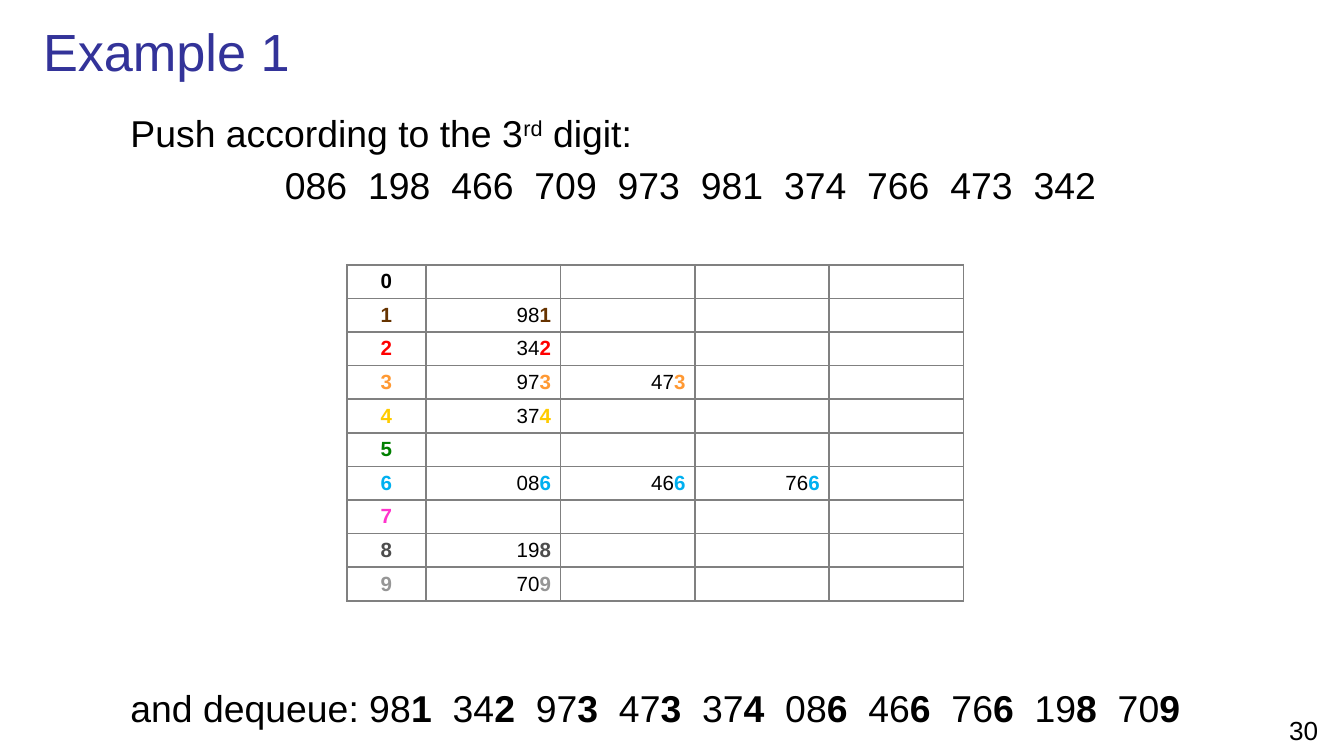
from lxml.etree import SubElement
from pptx import Presentation
from pptx.dml.color import RGBColor
from pptx.enum.text import MSO_ANCHOR as Anchor, MSO_AUTO_SIZE as AutoSize, PP_ALIGN as Align
from pptx.oxml import parse_xml
from pptx.oxml.ns import nsdecls, qn
from pptx.util import Inches, Pt

BLACK = RGBColor(0x00, 0x00, 0x00)
NAVY = RGBColor(0x33, 0x33, 0x99)
GRAY = RGBColor(0x80, 0x80, 0x80)
DIGIT_COLORS = [RGBColor.from_string(code) for code in (
    "000000", "663300", "FF0000", "FF9933", "FFCC00",
    "008000", "00B0F0", "FF33CC", "4D4D4D", "969696")]

TITLE = "Example 1"
PAGE_NUMBER = "30"
PUSHED = ["086", "198", "466", "709", "973", "981", "374", "766", "473", "342"]
QUEUES = [[number for number in PUSHED if number[-1] == str(digit)] for digit in range(10)]
DEQUEUED = [number for queue in QUEUES for number in queue]

SLIDE_WIDTH = 10
SLIDE_HEIGHT = SLIDE_WIDTH * 9 / 16
COLUMN_WIDTHS = [0.59, 1, 1, 1, 1]
ROW_HEIGHT = 0.25
BODY_SIZE = 20
CELL_SIZE = 11
GAP_SPACING = 556


def add_run(paragraph, text, size, color=BLACK, bold=False):
    run = paragraph.add_run()
    run.text = text
    for name, value in {"name": "Arial", "size": Pt(size), "bold": bold}.items():
        setattr(run.font, name, value)
    run.font.color.rgb = color
    return run


def add_number(paragraph, number, size, color=BLACK):
    add_run(paragraph, number[:-1], size)
    add_run(paragraph, number[-1], size, color, bold=True)


def add_numbers(paragraph, numbers, bold_last):
    for index, number in enumerate(numbers):
        if index:
            gap = add_run(paragraph, " ", BODY_SIZE)
            gap._r.get_or_add_rPr().set("spc", str(GAP_SPACING))
        if bold_last:
            add_number(paragraph, number, BODY_SIZE)
        else:
            add_run(paragraph, number, BODY_SIZE)


def format_body_paragraph(paragraph, indent, space_before):
    paragraph.alignment = Align.LEFT
    paragraph.space_before = Pt(space_before)
    properties = paragraph._p.get_or_add_pPr()
    properties.set("marL", str(Inches(indent)))
    properties.set("indent", "0")
    SubElement(properties, qn("a:buNone"))


def place(shape, left, top, width, height, anchor):
    shape.left, shape.top = Inches(left), Inches(top)
    shape.width, shape.height = Inches(width), Inches(height)
    frame = shape.text_frame
    settings = {"word_wrap": True, "auto_size": AutoSize.NONE, "vertical_anchor": anchor}
    for name, value in settings.items():
        setattr(frame, name, value)
    return frame


def format_cell(cell):
    margins = {"margin_left": 0.07, "margin_right": 0.07, "margin_top": 0.03, "margin_bottom": 0.03}
    for name, value in margins.items():
        setattr(cell, name, Inches(value))
    cell.vertical_anchor = Anchor.MIDDLE
    cell.fill.background()
    properties = cell._tc.get_or_add_tcPr()
    for position, side in enumerate(("lnL", "lnR", "lnT", "lnB")):
        properties.insert(position, parse_xml(
            f'<a:{side} {nsdecls("a")} w="{Pt(1)}"><a:solidFill>'
            f'<a:srgbClr val="{GRAY}"/></a:solidFill></a:{side}>'))


def fill_body(frame):
    heading = frame.paragraphs[0]
    format_body_paragraph(heading, 0.43, 2)
    add_run(heading, "Push according to the 3", BODY_SIZE)
    suffix = add_run(heading, "rd", BODY_SIZE)
    suffix._r.get_or_add_rPr().set("baseline", "30000")
    add_run(heading, " digit:", BODY_SIZE)

    pushed = frame.add_paragraph()
    format_body_paragraph(pushed, 1.58, 4)
    add_numbers(pushed, PUSHED, bold_last=False)

    dequeued = frame.add_paragraph()
    format_body_paragraph(dequeued, 0.43, 256)
    add_run(dequeued, "and dequeue: ", BODY_SIZE)
    add_numbers(dequeued, DEQUEUED, bold_last=True)


def add_queue_table(slide):
    table = slide.shapes.add_table(
        len(QUEUES), len(COLUMN_WIDTHS), Inches(2.58), Inches(1.97),
        Inches(sum(COLUMN_WIDTHS)), Inches(ROW_HEIGHT * len(QUEUES))).table
    table.first_row = table.horz_banding = False
    for column, width in zip(table.columns, COLUMN_WIDTHS):
        column.width = Inches(width)
    for digit, (row, queue) in enumerate(zip(table.rows, QUEUES)):
        row.height = Inches(ROW_HEIGHT)
        color = DIGIT_COLORS[digit]
        for index, cell in enumerate(row.cells):
            format_cell(cell)
            paragraph = cell.text_frame.paragraphs[0]
            paragraph.alignment = Align.RIGHT if index else Align.CENTER
            if index == 0:
                add_run(paragraph, str(digit), CELL_SIZE, color, bold=True)
            elif index <= len(queue):
                add_number(paragraph, queue[index - 1], CELL_SIZE, color)
            else:
                paragraph._p.get_or_add_endParaRPr().set("sz", str(CELL_SIZE * 100))


def main():
    presentation = Presentation()
    presentation.slide_width = Inches(SLIDE_WIDTH)
    presentation.slide_height = Inches(SLIDE_HEIGHT)
    slide = presentation.slides.add_slide(presentation.slide_layouts[1])

    title = place(slide.shapes.title, 0.22, 0.08, 9.74, 0.59, Anchor.MIDDLE).paragraphs[0]
    title.alignment = Align.LEFT
    add_run(title, TITLE, 28, NAVY)

    fill_body(place(slide.placeholders[1], 0.44, 0.77, 9.16, 4.38, Anchor.TOP))
    add_queue_table(slide)

    number_box = slide.shapes.add_textbox(0, 0, 0, 0)
    number = place(number_box, 9.4, 5.27, 0.6, 0.3, Anchor.TOP).paragraphs[0]
    number.alignment = Align.CENTER
    add_run(number, PAGE_NUMBER, 14)

    presentation.save("out.pptx")


if __name__ == "__main__":
    main()
